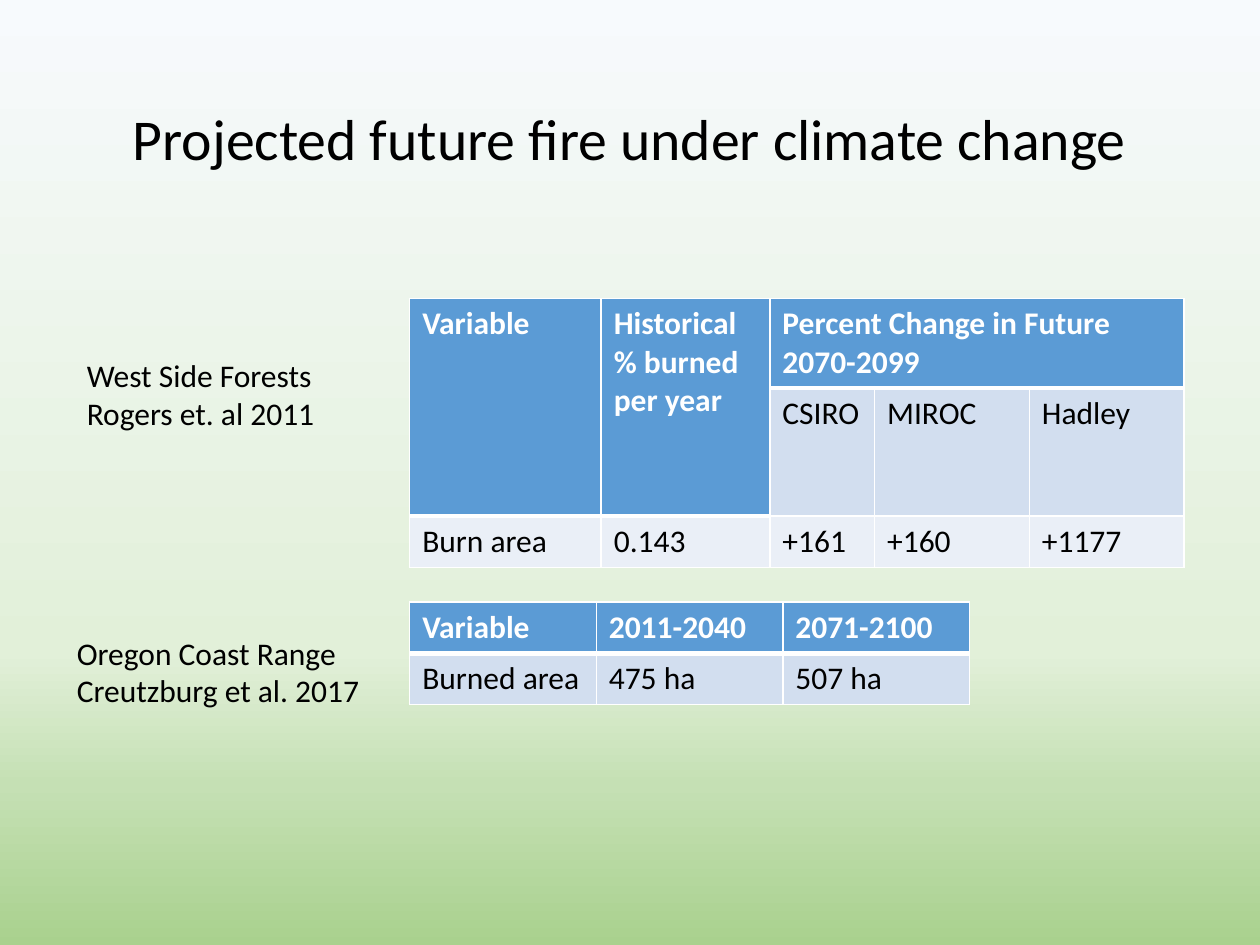
from dataclasses import dataclass

from lxml.etree import SubElement
from pptx import Presentation
from pptx.dml.color import RGBColor
from pptx.enum.text import MSO_ANCHOR, MSO_AUTO_SIZE, PP_ALIGN
from pptx.oxml import parse_xml
from pptx.oxml.ns import nsdecls, qn
from pptx.util import Cm, Pt


@dataclass(frozen=True)
class Theme:
    font: str = "Calibri"
    title_size: int = 33
    body_size: int = 18
    ink: str = "000000"
    light: str = "FFFFFF"
    header: str = "5B9BD5"
    bands: tuple = ("D2DEEF", "EAEFF7")
    sky: tuple = ((0, "F7FAFD"), (69, "E2F0D9"), (83, "C5E0B4"), (100, "A9D18E"))
    thin: int = 1
    thick: int = 3


class SlideBuilder:
    def __init__(self, page, theme):
        self.page = page
        self.theme = theme

    def background(self):
        fill = self.page.background.fill
        fill.gradient()
        fill.gradient_angle = 270
        stops = self.page.element.find(".//" + qn("a:gsLst"))
        for stop in list(stops):
            stops.remove(stop)
        for percent, color in self.theme.sky:
            stop = SubElement(stops, qn("a:gs"), pos=str(percent * 1000))
            SubElement(stop, qn("a:srgbClr"), val=color)

    def set_text(self, frame, text, color, size, bold=False, **paragraph_format):
        frame.text = text
        font_format = {"name": self.theme.font, "size": Pt(size), "bold": bold}
        for para in frame.paragraphs:
            for name, value in paragraph_format.items():
                setattr(para, name, value)
            for span in para.runs:
                for name, value in font_format.items():
                    setattr(span.font, name, value)
                span.font.color.rgb = RGBColor.from_string(color)

    def title(self, text, left, top, width, height):
        box = self.page.shapes.title
        place = {"left": left, "top": top, "width": width, "height": height}
        for name, value in place.items():
            setattr(box, name, Cm(value))
        box.text_frame.vertical_anchor = MSO_ANCHOR.MIDDLE
        self.set_text(box.text_frame, text, self.theme.ink, self.theme.title_size,
                      alignment=PP_ALIGN.CENTER, line_spacing=0.9)

    def label(self, text, left, top, width, height):
        box = self.page.shapes.add_textbox(Cm(left), Cm(top), Cm(width), Cm(height))
        box.text_frame.word_wrap = False
        box.text_frame.auto_size = MSO_AUTO_SIZE.SHAPE_TO_FIT_TEXT
        self.set_text(box.text_frame, text, self.theme.ink, self.theme.body_size)

    def borders(self, cell, bottom):
        """Draw the four cell edges; only the bottom weight varies."""
        properties = cell._tc.get_or_add_tcPr()
        thin = self.theme.thin
        edges = {"lnL": thin, "lnR": thin, "lnT": thin, "lnB": bottom}
        for index, (edge, weight) in enumerate(edges.items()):
            properties.insert(index, parse_xml(
                f'<a:{edge} {nsdecls("a")} w="{Pt(weight)}"><a:solidFill>'
                f'<a:srgbClr val="{self.theme.light}"/></a:solidFill></a:{edge}>'))

    def table(self, rows, left, top, widths, row_height, merges=()):
        """Build a table; None in rows marks a cell covered by a merged header."""
        theme = self.theme
        frame = self.page.shapes.add_table(
            len(rows), len(widths), Cm(left), Cm(top),
            Cm(sum(widths)), Cm(row_height * len(rows)))
        table = frame.table
        table.horz_banding = False
        for column, width in zip(table.columns, widths):
            column.width = Cm(width)
        for row_index, values in enumerate(rows):
            table.rows[row_index].height = Cm(row_height)
            for column_index, value in enumerate(values):
                cell = table.cell(row_index, column_index)
                is_header = row_index == 0 or value is None
                fill = theme.header if is_header else theme.bands[(row_index - 1) % 2]
                cell.fill.solid()
                cell.fill.fore_color.rgb = RGBColor.from_string(fill)
                self.borders(cell, theme.thick if is_header else theme.thin)
                if value is not None:
                    self.set_text(cell.text_frame, value,
                                  theme.light if is_header else theme.ink,
                                  theme.body_size, bold=is_header)
        for first, last in merges:
            table.cell(*first).merge(table.cell(*last))


def main():
    deck = Presentation()
    deck.slide_width, deck.slide_height = Cm(25.4), Cm(19.05)
    page = deck.slides.add_slide(deck.slide_layouts[5])
    builder = SlideBuilder(page, Theme())
    table_left, row_height = 8.26, 1.03

    builder.background()
    builder.title("Projected future fire under climate change", 1.75, 1.02, 21.89, 3.68)
    builder.table(
        [["Variable", "Historical\n% burned\nper year",
          "Percent Change in Future 2070-2099", None, None],
         [None, None, "CSIRO", "MIROC", "Hadley"],
         ["Burn area", "0.143", "+161", "+160", "+1177"]],
        table_left, 6.02, [3.86, 3.4, 2.11, 3.12, 3.12], row_height,
        merges=[((0, 0), (1, 0)), ((0, 1), (1, 1)), ((0, 2), (0, 4))])
    builder.label("West Side Forests\nRogers et. al 2011", 1.5, 7.06, 5.16, 1.8)
    builder.label("Oregon Coast Range\nCreutzburg et al. 2017", 1.3, 12.65, 6.27, 1.8)
    builder.table(
        [["Variable", "2011-2040", "2071-2100"],
         ["Burned area", "475 ha", "507 ha"]],
        table_left, 12.14, [3.76] * 3, row_height)

    deck.save("out.pptx")


if __name__ == "__main__":
    main()
